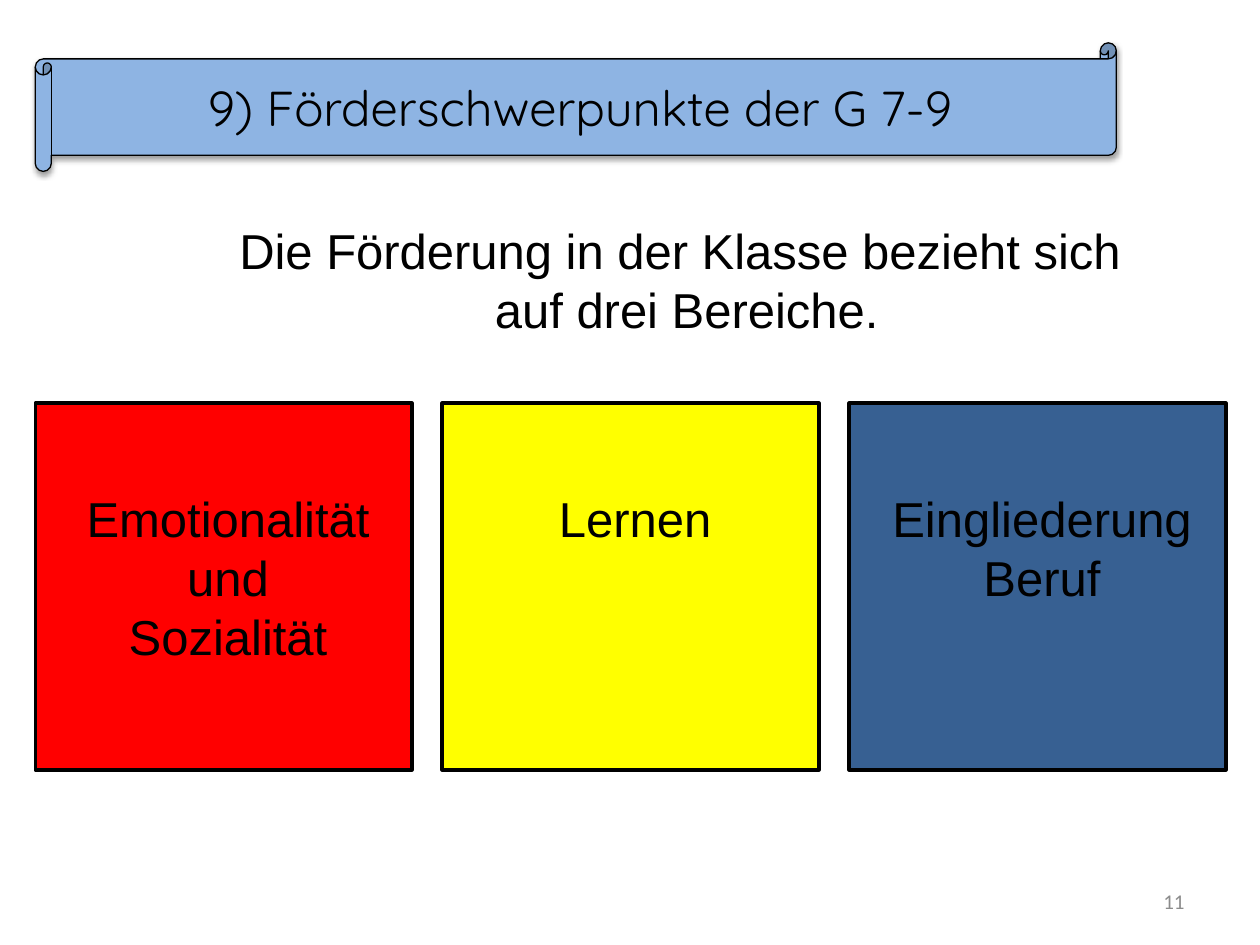
from lxml import etree
from pptx import Presentation
from pptx import util as u
from pptx.dml.color import RGBColor
from pptx.enum import shapes, text
from pptx.oxml import ns

PX = 9144  # EMU per px, 100 px to the inch

BLACK = RGBColor(0x00, 0x00, 0x00)
GRAY = RGBColor(0x8C, 0x8C, 0x8C)
LIGHT_BLUE = RGBColor(0x8E, 0xB4, 0xE3)
RED = RGBColor(0xFF, 0x00, 0x00)
YELLOW = RGBColor(0xFF, 0xFF, 0x00)
BLUE = RGBColor(0x37, 0x60, 0x92)

presentation = Presentation()
presentation.slide_width = 1000 * PX
presentation.slide_height = 750 * PX
slide = presentation.slides.add_slide(presentation.slide_layouts[6])


def add_shape(kind, left, top, width, height, fill, line_width):
    shape = slide.shapes.add_shape(kind, left * PX, top * PX, width * PX, height * PX)
    shape.shadow.inherit = False
    shape.fill.solid()
    shape.fill.fore_color.rgb = fill
    shape.line.color.rgb = BLACK
    shape.line.width = u.Pt(line_width)
    return shape


def write(shape, lines, size=28, font="Arial", color=BLACK,
          align=text.PP_ALIGN.CENTER, anchor=text.MSO_ANCHOR.TOP):
    frame = shape.text_frame
    frame.word_wrap = True
    frame.vertical_anchor = anchor
    frame.text = "\n".join(lines)
    for paragraph in frame.paragraphs:
        paragraph.alignment = align
        paragraph.font.size = u.Pt(size)
        for run in paragraph.runs:
            run.font.size = u.Pt(size)
            run.font.name = font
            run.font.color.rgb = color


# Title scroll with a soft shadow
scroll = add_shape(shapes.MSO_SHAPE.HORIZONTAL_SCROLL, 28, 34, 858, 102, LIGHT_BLUE, 0.75)
write(scroll, ["9) Förderschwerpunkte der G 7-9"], font="Quicksand",
      anchor=text.MSO_ANCHOR.MIDDLE)
effects = scroll._element.spPr.find(ns.qn("a:effectLst"))
shadow = etree.SubElement(effects, ns.qn("a:outerShdw"), blurRad="40000",
                          dist="20000", dir="5400000", rotWithShape="0")
shadow_color = etree.SubElement(shadow, ns.qn("a:srgbClr"), val="000000")
etree.SubElement(shadow_color, ns.qn("a:alpha"), val="38000")

# Introduction with a hanging indent
introduction = slide.shapes.add_textbox(75 * PX, 170 * PX, 890 * PX, 104 * PX)
write(introduction, ["Die Förderung in der Klasse bezieht sich ", "auf drei Bereiche."])
for paragraph in introduction.text_frame.paragraphs:
    properties = paragraph._p.get_or_add_pPr()
    properties.set("marL", str(100 * PX))
    properties.set("indent", str(-50 * PX))

# Three areas of support
areas = [
    (RED, ["Emotionalität", "und", "Sozialität"]),
    (YELLOW, ["Lernen"]),
    (BLUE, ["Eingliederung", "Beruf"]),
]
for index, (fill, lines) in enumerate(areas):
    left = 28 + 323 * index
    add_shape(shapes.MSO_SHAPE.RECTANGLE, left, 320, 299, 291, fill, 2)
    label = slide.shapes.add_textbox((left + 23) * PX, 383 * PX, 260 * PX,
                                     (10 + 47 * len(lines)) * PX)
    write(label, lines)

# Page number
page_number = slide.shapes.add_textbox(717 * PX, 695 * PX, 233 * PX, 40 * PX)
write(page_number, ["11"], size=12, font="Calibri", color=GRAY,
      align=text.PP_ALIGN.RIGHT, anchor=text.MSO_ANCHOR.MIDDLE)

presentation.save("out.pptx")
